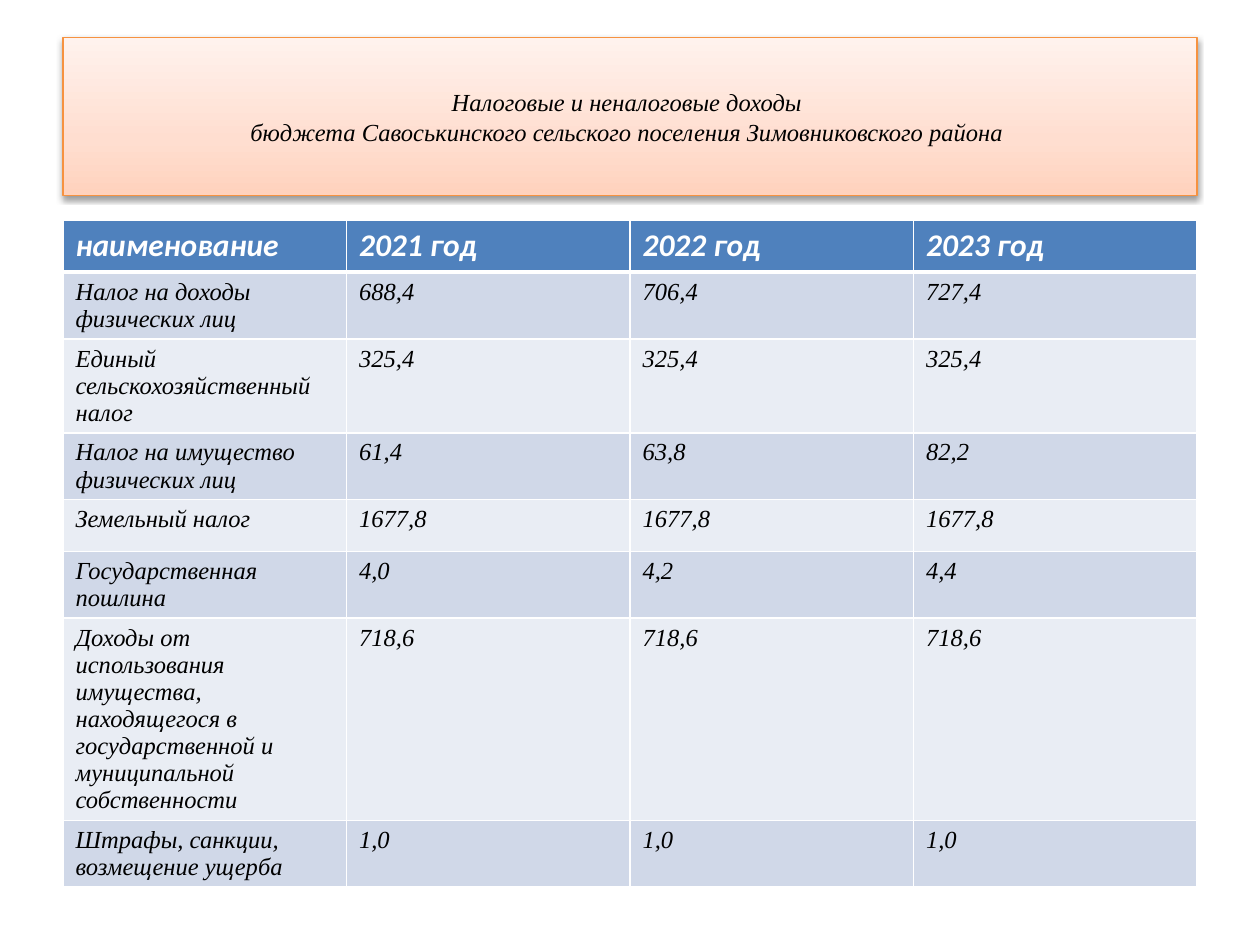
from pptx import Presentation
from pptx.dml.color import RGBColor
from pptx.enum.text import MSO_ANCHOR, PP_ALIGN
from pptx.oxml import parse_xml
from pptx.util import Inches, Pt

MIDDLE, CENTER = MSO_ANCHOR.MIDDLE, PP_ALIGN.CENTER
NS = 'xmlns:a="http://schemas.openxmlformats.org/drawingml/2006/main"'
SERIF, SANS = "Times New Roman", "Calibri"
WHITE, BLACK, HEADER, BANDS = "FFFFFF", "000000", "4F81BD", ("E9EDF4", "D0D8E8")
GRADIENT = [(0, "FFD2BD"), (35, "FFDED0"), (100, "FFF2ED")]

TITLE = ("Налоговые и неналоговые доходы \v"
         "бюджета Савоськинского сельского поселения Зимовниковского района ")
ROWS = [
    ("наименование", "2021 год", "2022 год", "2023 год"),
    ("Налог на доходы физических лиц", "688,4", "706,4", "727,4"),
    ("Единый сельскохозяйственный налог", "325,4", "325,4", "325,4"),
    ("Налог на имущество физических лиц", "61,4", "63,8", "82,2"),
    ("Земельный налог", "1677,8", "1677,8", "1677,8"),
    ("Государственная пошлина", "4,0", "4,2", "4,4"),
    ("Доходы от использования имущества, находящегося в государственной "
     "и муниципальной собственности", "718,6", "718,6", "718,6"),
    ("Штрафы, санкции, возмещение ущерба", "1,0", "1,0", "1,0"),
]


def rgb(value):
    return RGBColor.from_string(value)


def format_runs(tf, font, size, color, bold=False):
    for p in tf.paragraphs:
        for r in p.runs:
            r.font.name, r.font.size = font, Pt(size)
            r.font.bold, r.font.italic = bold, True
            r.font.color.rgb = rgb(color)


def add_title(s):
    title = s.shapes.title
    title.left, title.top = Inches(0.5), Inches(0.3)
    title.width, title.height = Inches(9), Inches(1.25)
    title.line.color.rgb = rgb("F69240")
    title.line.width = Pt(0.75)
    stops = "".join(f'<a:gs pos="{pos * 1000}"><a:srgbClr val="{color}"/></a:gs>'
                    for pos, color in GRADIENT)
    line = title.line._get_or_add_ln()
    line.addprevious(parse_xml(
        f'<a:gradFill {NS} rotWithShape="1"><a:gsLst>{stops}</a:gsLst>'
        '<a:lin ang="16200000" scaled="0"/></a:gradFill>'))
    line.addnext(parse_xml(
        f'<a:effectLst {NS}><a:outerShdw blurRad="{Pt(3.1)}" dist="{Pt(1.6)}" '
        'dir="5400000" rotWithShape="0"><a:srgbClr val="000000">'
        '<a:alpha val="38000"/></a:srgbClr></a:outerShdw></a:effectLst>'))
    tf = title.text_frame
    tf.text = TITLE
    tf.vertical_anchor = MIDDLE
    tf.paragraphs[0].alignment = CENTER
    format_runs(tf, SERIF, 14, BLACK)


def set_borders(cell, top, bottom):
    tc_pr = cell._tc.get_or_add_tcPr()
    for side, width in zip("LRTB", (1, 1, top, bottom)):
        tc_pr.append(parse_xml(
            f'<a:ln{side} {NS} w="{Pt(width)}"><a:solidFill>'
            f'<a:srgbClr val="{WHITE}"/></a:solidFill></a:ln{side}>'))


def add_income_table(s):
    height = Inches(0.41)
    table = s.shapes.add_table(len(ROWS), len(ROWS[0]), Inches(0.5), Inches(1.75),
                               Inches(9), height * len(ROWS)).table
    for i, row in enumerate(ROWS):
        table.rows[i].height = height
        for j, text in enumerate(row):
            cell = table.cell(i, j)
            cell.text = text
            set_borders(cell, 3 if i == 1 else 1, 3 if i == 0 else 1)
            cell.fill.solid()
            cell.fill.fore_color.rgb = rgb(BANDS[i % 2] if i else HEADER)
            style = (SERIF, 14, BLACK) if i else (SANS, 18, WHITE, True)
            format_runs(cell.text_frame, *style)


def main():
    """Build the slide of tax and non-tax budget income."""
    prs = Presentation()
    prs.slide_width, prs.slide_height = Inches(10), Inches(7.5)
    s = prs.slides.add_slide(prs.slide_layouts[5])
    add_title(s)
    add_income_table(s)
    prs.save("out.pptx")


if __name__ == "__main__":
    main()
